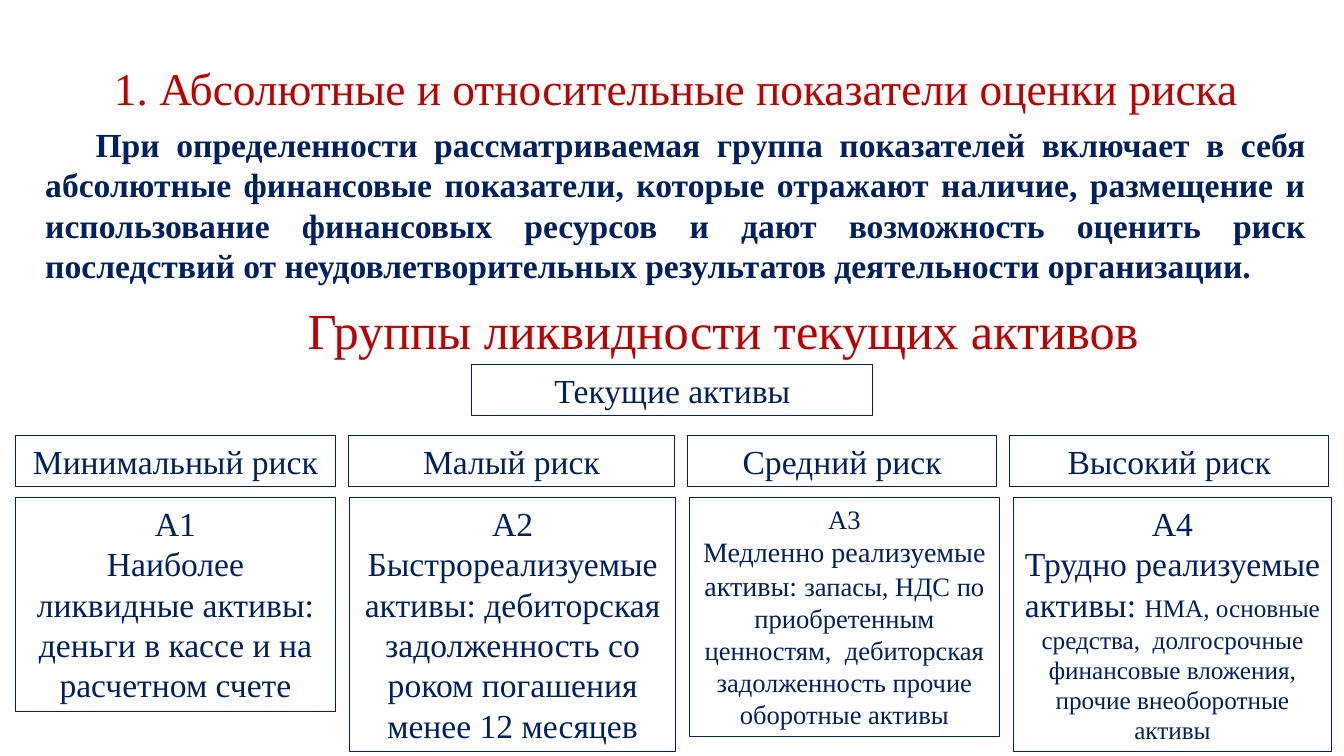
from itertools import accumulate

from pptx import Presentation
from pptx import util as u
from pptx.dml.color import RGBColor
from pptx.enum import shapes, text

RED = RGBColor(0xC0, 0x00, 0x00)
NAVY = RGBColor(0x00, 0x20, 0x60)
ALIGN = text.PP_ALIGN
ANCHOR = text.MSO_ANCHOR
GROW = text.MSO_AUTO_SIZE.SHAPE_TO_FIT_TEXT


def apply(item, style):
    for key, value in style.items():
        setattr(item, key, value)


class Board:
    font = "Times New Roman"
    grid = 100

    def __init__(self, deck):
        self.deck = deck
        self.slide = deck.slides.add_slide(deck.slide_layouts[6])

    def place(self, x, y, w, h):
        col = self.deck.slide_width / self.grid
        row = self.deck.slide_height / self.grid
        return [round(n * unit) for n, unit in zip((x, y, w, h), (col, row) * 2)]

    def label(self, shape, runs, color, frame, para, bold=False):
        body = shape.text_frame
        apply(body, {"word_wrap": True, **frame})
        line = body.paragraphs[0]
        apply(line, para)
        for words, size in runs:
            for i, part in enumerate(words.split("\n")):
                if i:
                    line.add_line_break()
                if part:
                    run = line.add_run()
                    run.text = part
                    apply(run.font, {"name": self.font, "size": u.Pt(size), "bold": bold})
                    run.font.color.rgb = color

    def head(self, spot, words, size, anchor):
        box = self.slide.shapes.add_textbox(*self.place(*spot))
        self.label(box, [(words, size)], RED, {"vertical_anchor": anchor},
                   {"alignment": ALIGN.CENTER, "line_spacing": 0.9})

    def prose(self, spot, words, size):
        box = self.slide.shapes.add_textbox(*self.place(*spot))
        self.label(box, [(words, size)], NAVY, {"auto_size": GROW},
                   {"alignment": ALIGN.JUSTIFY}, bold=True)

    def card(self, spot, *runs):
        box = self.slide.shapes.add_shape(shapes.MSO_SHAPE.RECTANGLE, *self.place(*spot))
        box.shadow.inherit = False
        box.fill.background()
        box.line.color.rgb = NAVY
        box.line.width = u.Pt(0.75)
        self.label(box, runs, NAVY, {"auto_size": GROW, "vertical_anchor": ANCHOR.TOP},
                   {"alignment": ALIGN.CENTER})


RISKS = [
    ("Минимальный риск", 23.85, 28.27, [
        ("А1\nНаиболее ликвидные активы: деньги в кассе и на расчетном счете", 24)]),
    ("Малый риск", 24.23, 33.6, [
        ("А2\nБыстрореализуемые активы: дебиторская задолженность со роком "
         "погашения менее 12 месяцев", 24)]),
    ("Средний риск", 23.03, 31.6, [
        ("А3\n", 19),
        ("Медленно реализуемые активы: ", 20),
        ("запасы, НДС по приобретенным ценностям,  дебиторская задолженность "
         "прочие оборотные активы", 19)]),
    ("Высокий риск", 23.7, 33.6, [
        ("А4\nТрудно реализуемые активы: ", 24),
        ("НМА, основные средства,  долгосрочные финансовые вложения, "
         "прочие внеоборотные активы", 18)]),
]
LEFT, GAP, SHIFT = 1.13, 0.97, 0.08
BAR = 6.67


def main():
    deck = Presentation()
    deck.slide_width, deck.slide_height = u.Inches(13.33), u.Inches(7.5)
    board = Board(deck)
    board.head((5.1, 4.93, 90.38, 10.93),
               "1. Абсолютные и относительные показатели оценки риска", 32.4, ANCHOR.BOTTOM)
    board.prose((2.63, 15.73, 95.25, 28.27),
                "\tПри определенности рассматриваемая группа показателей включает в себя "
                "абсолютные финансовые показатели, которые отражают наличие, размещение и "
                "использование финансовых ресурсов и дают возможность оценить риск последствий "
                "от неудовлетворительных результатов деятельности организации.", 24)
    board.head((8.63, 38.67, 90.38, 10.93),
               "Группы ликвидности текущих активов", 36, ANCHOR.MIDDLE)
    board.card((35.1, 48.27, 29.85, BAR), ("Текущие активы", 24))
    edges = accumulate((wide + GAP for _, wide, _, _ in RISKS), initial=LEFT)
    for i, (x, (risk, wide, tall, runs)) in enumerate(zip(edges, RISKS)):
        board.card((x, 57.65, wide, BAR), (risk, 24))
        board.card((x + i * SHIFT, 65.87, wide, tall), *runs)
    deck.save("out.pptx")


if __name__ == "__main__":
    main()
